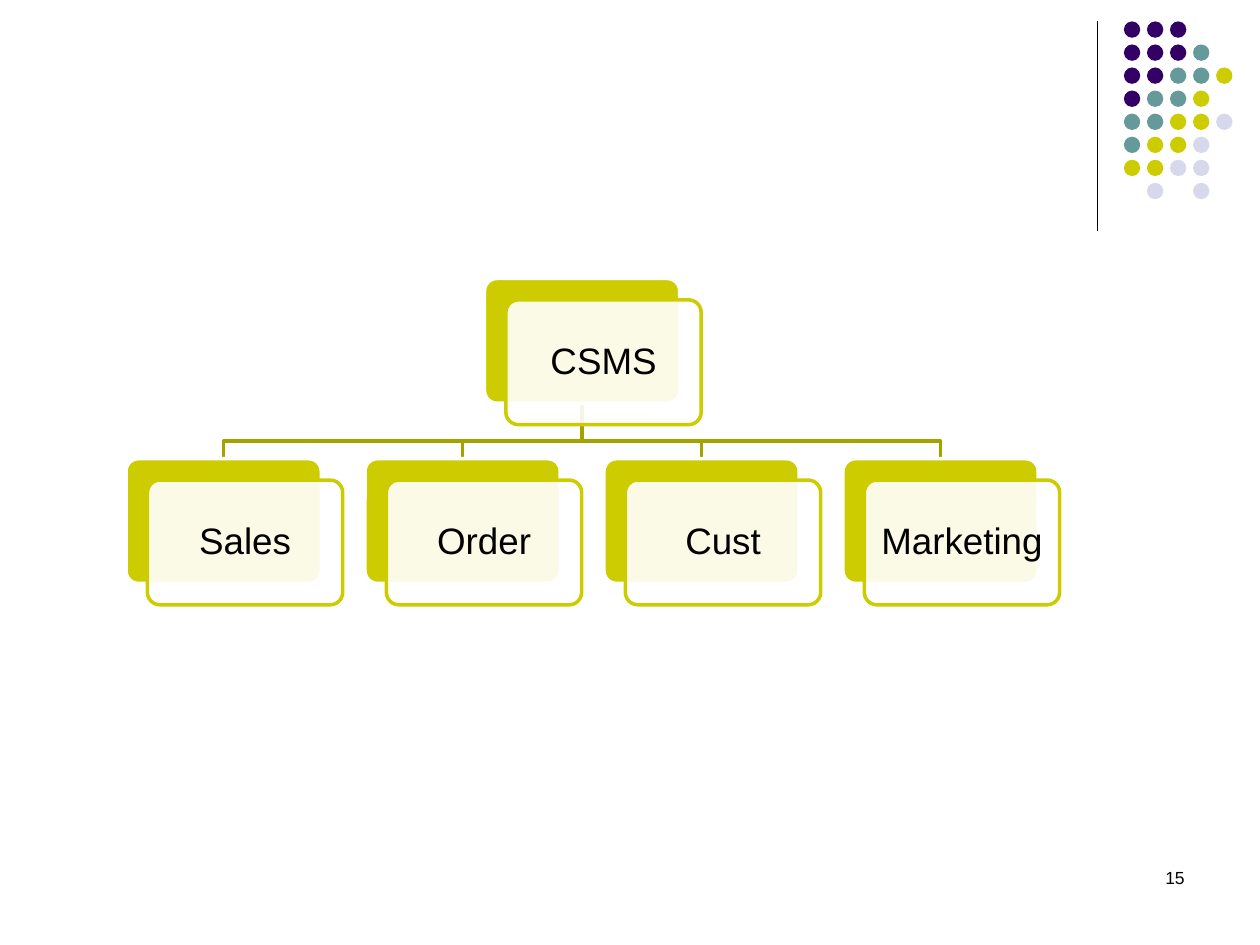
from lxml.etree import SubElement
from pptx import Presentation
from pptx.dml.color import RGBColor
from pptx.enum.shapes import MSO_CONNECTOR, MSO_SHAPE
from pptx.enum.text import MSO_ANCHOR, PP_ALIGN
from pptx.oxml.ns import qn
from pptx.util import Inches, Pt

BLACK, WHITE = "000000", "FFFFFF"
OLIVE, DARK_OLIVE = "CCCC00", "A3A300"

# Dot pattern: one letter per dot, a space where there is none
DOT_COLORS = {"P": "330066", "T": "669999", "O": OLIVE, "L": "D8D8EC"}
DOT_ROWS = ["PPP", "PPPT", "PPTTO", "PTTO", "TTOOL", "TOOL", "OOLL", " L L"]
DOT_LEFT, DOT_TOP, DOT_SIZE, DOT_PITCH = 8.92, 0.17, 0.13, 0.183

# Organisation chart grid
DEPARTMENTS = ["Sales", "Order", "Cust", "Marketing"]
CARD_W, CARD_H = 1.55, 0.99
CARD_OFFSET = 0.17
CHART_LEFT, CHART_RIGHT = 1, 8.24
ROOT_TOP, DEPARTMENT_TOP = 2.21, 3.64
BRANCH_START, BRANCH_TURN = 3.19, 3.5
COLUMN_PITCH = (CHART_RIGHT - CARD_W - CHART_LEFT) / (len(DEPARTMENTS) - 1)


def rgb(hex_color):
    return RGBColor.from_string(hex_color)


def column_left(column):
    return CHART_LEFT + column * COLUMN_PITCH


def add_filled(slide, kind, left, top, width, height, fill, line=None):
    shape = slide.shapes.add_shape(
        kind, Inches(left), Inches(top), Inches(width), Inches(height))
    shape.shadow.inherit = False
    shape.fill.solid()
    shape.fill.fore_color.rgb = rgb(fill)
    if line:
        shape.line.color.rgb = rgb(line)
        shape.line.width = Pt(2)
    else:
        shape.line.fill.background()
    return shape


def add_text(slide, text, left, top, width, height, *, size, align,
             anchor=MSO_ANCHOR.TOP, inset=0.1, spacing=None):
    box = slide.shapes.add_textbox(
        Inches(left), Inches(top), Inches(width), Inches(height))
    frame = box.text_frame
    frame.word_wrap = True
    frame.vertical_anchor = anchor
    frame.margin_left = frame.margin_right = Inches(inset)
    frame.margin_top = frame.margin_bottom = Inches(inset / 2)
    paragraph = frame.paragraphs[0]
    paragraph.alignment = align
    paragraph.line_spacing = spacing
    run = paragraph.add_run()
    run.text = text
    run.font.name = "Arial"
    run.font.size = Pt(size)
    run.font.color.rgb = rgb(BLACK)


def add_divider(slide, x, top, bottom):
    divider = slide.shapes.add_connector(
        MSO_CONNECTOR.STRAIGHT, Inches(x), Inches(top), Inches(x), Inches(bottom))
    divider.line.color.rgb = rgb(BLACK)
    divider.line.width = Pt(0.75)
    SubElement(divider.element.spPr, qn("a:effectLst"))


def add_dots(slide):
    for row, letters in enumerate(DOT_ROWS):
        for column, letter in enumerate(letters):
            if letter in DOT_COLORS:
                add_filled(slide, MSO_SHAPE.OVAL,
                           DOT_LEFT + column * DOT_PITCH, DOT_TOP + row * DOT_PITCH,
                           DOT_SIZE, DOT_SIZE, DOT_COLORS[letter])


def add_branch(slide, from_column, to_column):
    start = Inches(column_left(from_column) + CARD_W / 2)
    end = Inches(column_left(to_column) + CARD_W / 2)
    turn = Inches(BRANCH_TURN)
    builder = slide.shapes.build_freeform(start, Inches(BRANCH_START))
    builder.add_line_segments(
        [(start, turn), (end, turn), (end, Inches(DEPARTMENT_TOP))], close=False)
    branch = builder.convert_to_shape()
    branch.shadow.inherit = False
    branch.fill.background()
    branch.line.color.rgb = rgb(DARK_OLIVE)
    branch.line.width = Pt(2)


def add_card(slide, label, column, top):
    left = column_left(column)
    front_left, front_top = left + CARD_OFFSET, top + CARD_OFFSET
    back = add_filled(slide, MSO_SHAPE.ROUNDED_RECTANGLE,
                      left, top, CARD_W, CARD_H, OLIVE, WHITE)
    front = add_filled(slide, MSO_SHAPE.ROUNDED_RECTANGLE,
                       front_left, front_top, CARD_W, CARD_H, WHITE, OLIVE)
    for card in (back, front):
        card.adjustments[0] = 0.1
    # The front card lets the back one show through
    front_color = front.element.spPr.find(qn("a:solidFill"))[0]
    SubElement(front_color, qn("a:alpha"), val="90000")
    add_text(slide, label, front_left + 0.03, front_top + 0.03,
             CARD_W - 0.06, CARD_H - 0.06, size=21, align=PP_ALIGN.CENTER,
             anchor=MSO_ANCHOR.MIDDLE, inset=0.09, spacing=0.9)


def main():
    prs = Presentation()
    prs.slide_width, prs.slide_height = Inches(10), Inches(7.5)
    slide = prs.slides.add_slide(prs.slide_layouts[6])

    # Corner decoration and page number
    add_divider(slide, 8.71, 0.17, 1.83)
    add_dots(slide)
    add_text(slide, "15", 8.25, 6.83, 1.25, 0.5, size=10, align=PP_ALIGN.RIGHT)

    # Organisation chart: branches lie behind the cards
    root_column = (len(DEPARTMENTS) - 1) / 2
    for column in reversed(range(len(DEPARTMENTS))):
        add_branch(slide, root_column, column)
    add_card(slide, "CSMS", root_column, ROOT_TOP)
    for column, department in enumerate(DEPARTMENTS):
        add_card(slide, department, column, DEPARTMENT_TOP)

    prs.save("out.pptx")


if __name__ == "__main__":
    main()
